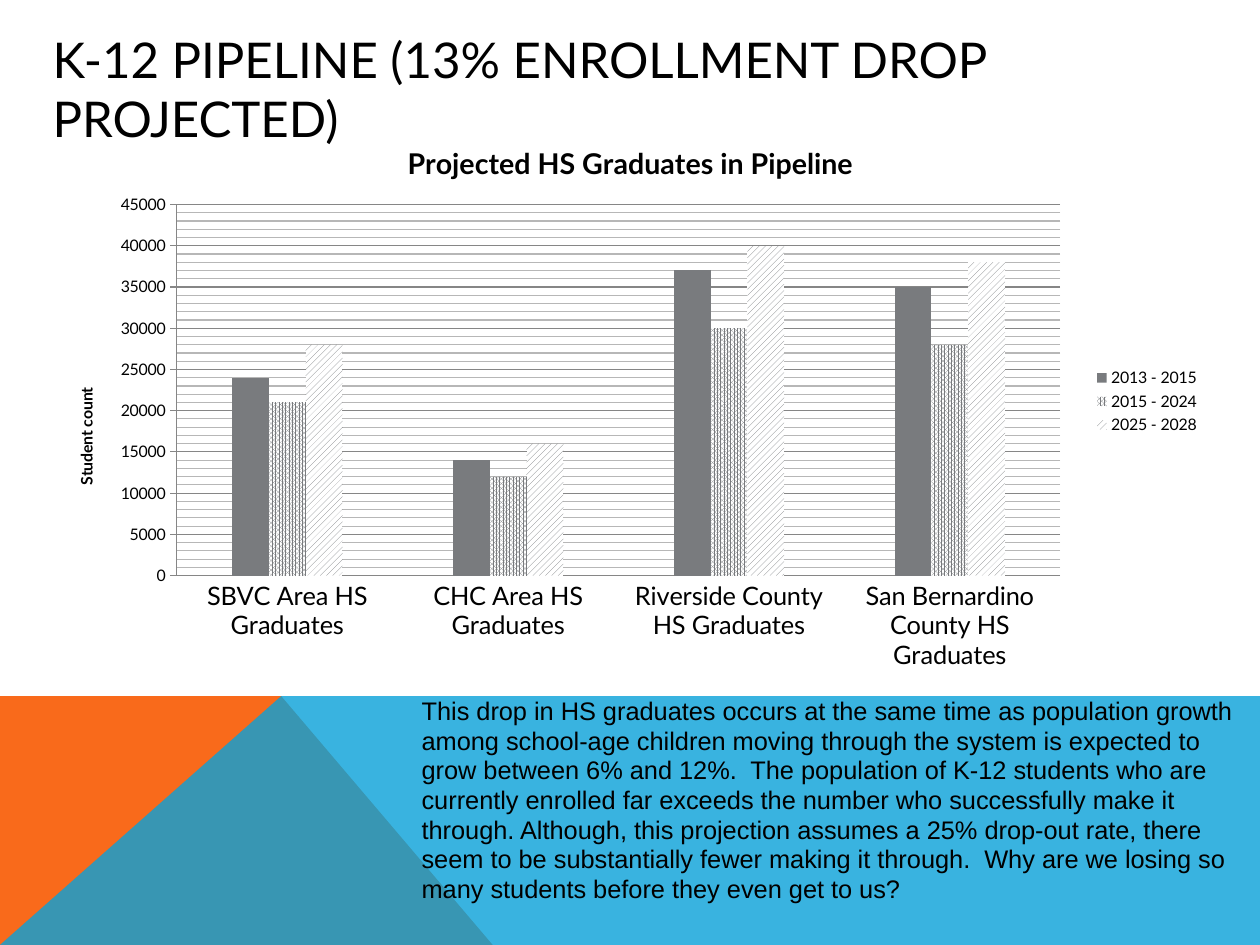
from lxml import etree
from pptx import Presentation
from pptx.chart.data import CategoryChartData
from pptx.dml.color import RGBColor
from pptx.enum.chart import XL_CHART_TYPE, XL_LEGEND_POSITION as LegendPos, XL_TICK_MARK as Tick
from pptx.enum.dml import MSO_PATTERN as Pattern
from pptx.enum.text import MSO_ANCHOR, MSO_AUTO_SIZE, PP_ALIGN
from pptx.oxml import parse_xml
from pptx.oxml.ns import nsdecls, qn
from pptx.util import Cm, Pt

# Content
TITLE = "K-12 PIPELINE (13% ENROLLMENT DROP PROJECTED)"
CHART_TITLE = "Projected HS Graduates in Pipeline"
AXIS_TITLE = "Student count"
CATEGORIES = [
    "SBVC Area HS Graduates",
    "CHC Area HS Graduates",
    "Riverside County HS Graduates",
    "San Bernardino County HS Graduates",
]
SERIES = [  # name, values, pattern (None is solid)
    ("2013 - 2015", (24000, 14000, 37000, 35000), None),
    ("2015 - 2024", (21000, 12000, 30000, 28000), Pattern.PERCENT_80),
    ("2025 - 2028", (28000, 16000, 40000, 38000), Pattern.WIDE_UPWARD_DIAGONAL),
]
COMMENT = (
    "This drop in HS graduates occurs at the same time as population growth among "
    "school-age children moving through the system is expected to grow between 6% and 12%.  "
    "The population of K-12 students who are currently enrolled far exceeds the number who "
    "successfully make it through. Although, this projection assumes a 25% drop-out rate, "
    "there seem to be substantially fewer making it through.  Why are we losing so many "
    "students before they even get to us?"
)

# Style and measures in centimetres
COLORS = {"text": "000000", "white": "FFFFFF", "orange": "F96A1B", "blue": "08A1D9",
          "bar": "797B7E", "major": "868686", "minor": "B7B7B7"}
WIDTH, HEIGHT = 28, 21
BAND_TOP, PEAK, FOOT = 15.47, 6.25, 10.95


def rgb(name):
    return RGBColor.from_string(COLORS[name])


def style(font, size, bold=False, face="Lato"):
    font.name, font.size, font.bold = face, Pt(size), bold
    font.color.rgb = rgb("text")


def add_band(points, color, opacity=100):
    corners = [(Cm(x), Cm(y)) for x, y in points]
    builder = s.shapes.build_freeform(*corners[0], scale=1.0)
    builder.add_line_segments(corners[1:], close=True)
    sp = builder.convert_to_shape()
    sp.shadow.inherit = False
    sp.fill.solid()
    sp.fill.fore_color.rgb = rgb(color)
    sp.line.fill.background()
    if opacity < 100:
        clr = sp.fill._xPr.find(".//" + qn("a:srgbClr"))
        etree.SubElement(clr, qn("a:alpha"), val=str(opacity * 1000))


def place(element, **fractions):
    """Give a chart part a manual layout, in fractions of the chart."""
    layout = element.find(qn("c:layout"))
    target = '<c:layoutTarget val="inner"/>' if "w" in fractions else ""
    modes = "".join(f'<c:{k}Mode val="edge"/>' for k in "xy")
    sizes = "".join(f'<c:{k} val="{v}"/>' for k, v in fractions.items())
    new = parse_xml(f'<c:layout {nsdecls("c")}><c:manualLayout>{target}{modes}{sizes}'
                    "</c:manualLayout></c:layout>")
    if layout is not None:
        element.replace(layout, new)
    elif element.find(qn("c:tx")) is not None:
        element.find(qn("c:tx")).addnext(new)
    else:
        element.insert(0, new)


def set_title(owner, text, size, **position):
    tf = owner.text_frame
    tf.text = text
    style(tf.paragraphs[0].runs[0].font, size, bold=True)
    if position:
        place(owner._element, **position)


prs = Presentation()
prs.slide_width, prs.slide_height = Cm(WIDTH), Cm(HEIGHT)
s = prs.slides.add_slide(prs.slide_layouts[5])

# Coloured bands at the foot
add_band([(0, HEIGHT), (0, BAND_TOP), (PEAK, BAND_TOP), (FOOT, HEIGHT)], "orange")
add_band([(0, HEIGHT), (PEAK, BAND_TOP), (WIDTH, BAND_TOP), (WIDTH, HEIGHT)], "blue", 80)

# Title
title = s.shapes.title
title.left, title.top, title.width, title.height = Cm(0.89), Cm(1.12), Cm(26.67), Cm(1.68)
tf = title.text_frame
tf.text = TITLE
tf.word_wrap, tf.auto_size = True, MSO_AUTO_SIZE.NONE
tf.vertical_anchor = MSO_ANCHOR.MIDDLE
tf.margin_left = tf.margin_right = Cm(0.28)
tf.margin_top = tf.margin_bottom = Cm(0.15)
tf.paragraphs[0].alignment = PP_ALIGN.LEFT
style(tf.paragraphs[0].runs[0].font, 31)

# Chart
data = CategoryChartData(number_format="General")
data.categories = CATEGORIES
for name, values, _ in SERIES:
    data.add_series(name, values)
chart = s.shapes.add_chart(XL_CHART_TYPE.COLUMN_CLUSTERED, Cm(1.09), Cm(2.67),
                           Cm(25.83), Cm(12.5), data).chart
style(chart.font, 10)
chart.has_title = True
set_title(chart.chart_title, CHART_TITLE, 18)
chart.has_legend = True
chart.legend.position = LegendPos.RIGHT
chart.legend.include_in_layout = False
style(chart.legend.font, 10)

# Bars
plot = chart.plots[0]
plot.gap_width, plot.overlap, plot.vary_by_categories = 300, 0, False
for series, (_, _, pattern) in zip(plot.series, SERIES):
    fill = series.format.fill
    if pattern is None:
        fill.solid()
    else:
        fill.patterned()
        fill.pattern = pattern
        fill.back_color.rgb = rgb("white")
    fill.fore_color.rgb = rgb("bar")
    series.invert_if_negative = False

# Axes
cat, val = chart.category_axis, chart.value_axis
cat.major_tick_mark = Tick.NONE
style(cat.tick_labels.font, 16)
val.minimum_scale, val.maximum_scale = 0, 45000
val.major_unit, val.minor_unit = 5000, 1000
val.major_tick_mark = Tick.OUTSIDE
val.has_major_gridlines = val.has_minor_gridlines = True
style(val.tick_labels.font, 10)
val.has_title = True
set_title(val.axis_title, AXIS_TITLE, 10, x=0.02, y=0.47)
for part in (cat, val, val.major_gridlines):
    part.format.line.color.rgb = rgb("major")
    part.format.line.width = Pt(0.75)
minor_grid = val._element.find(qn("c:minorGridlines"))
minor_grid.append(parse_xml(
    f'<c:spPr {nsdecls("c", "a")}><a:ln w="{Pt(0.75)}"><a:solidFill>'
    f'<a:srgbClr val="{COLORS["minor"]}"/></a:solidFill></a:ln></c:spPr>'))
place(chart._chartSpace.chart.plotArea, x=0.11, y=0.15, w=0.76, h=0.66)

# Comment
tf = s.shapes.add_textbox(Cm(9.12), Cm(15.37), Cm(18.88), Cm(4.7)).text_frame
tf.word_wrap = True
tf.text = COMMENT
p = tf.paragraphs[0]
p.line_spacing = 0.97
style(p.runs[0].font, 16, face="Arial")

prs.save("out.pptx")
